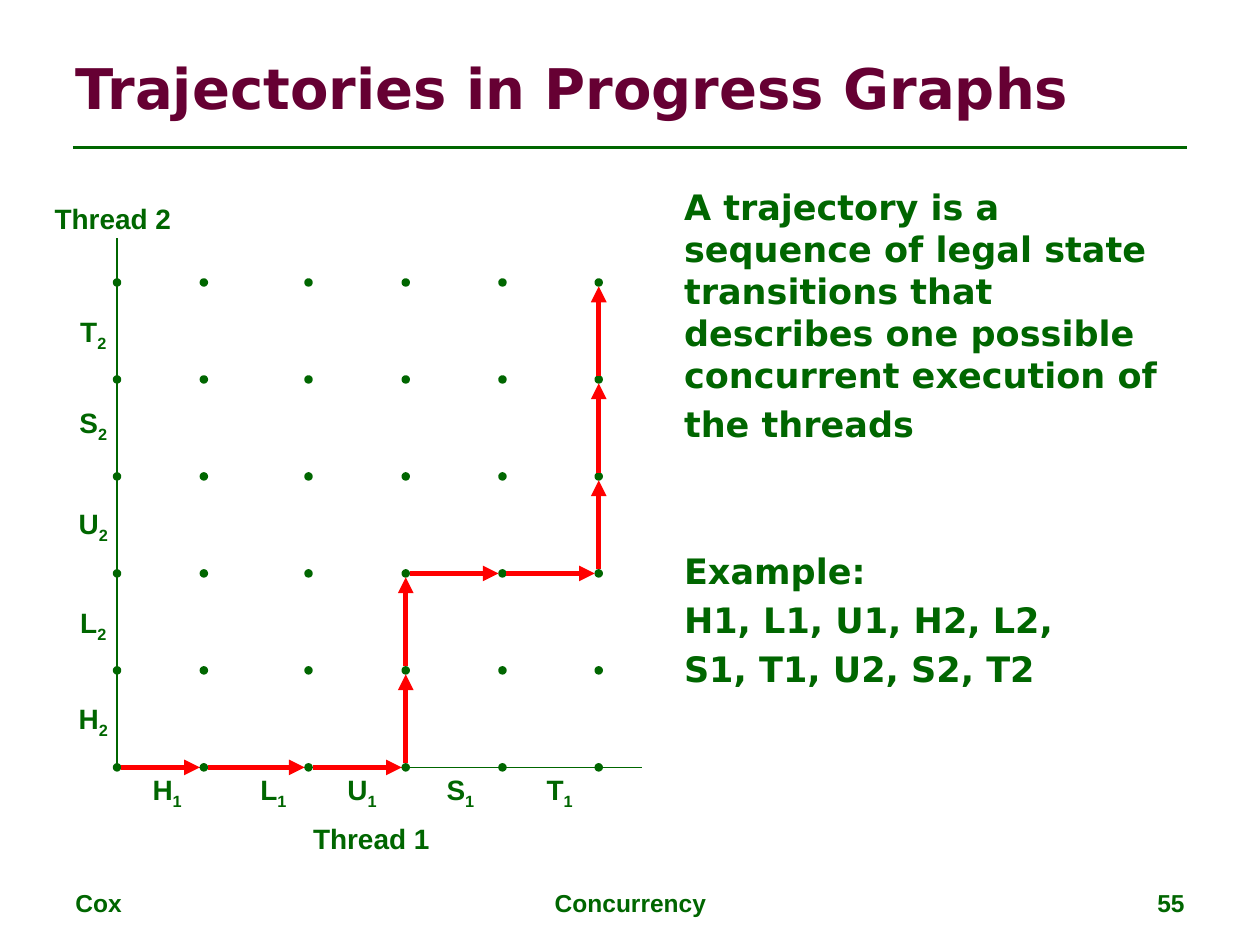
"""Build the slide on trajectories in progress graphs."""
from dataclasses import dataclass

from lxml.etree import SubElement
from pptx import Presentation
from pptx.dml.color import RGBColor
from pptx.enum.shapes import MSO_CONNECTOR, MSO_SHAPE
from pptx.enum.text import MSO_ANCHOR, MSO_AUTO_SIZE, PP_ALIGN
from pptx.oxml.ns import qn
from pptx.util import Cm, Pt


@dataclass(frozen=True)
class Theme:
    green: RGBColor = RGBColor(0x00, 0x66, 0x00)
    plum: RGBColor = RGBColor(0x66, 0x00, 0x33)
    red: RGBColor = RGBColor(0xFF, 0x00, 0x00)
    heading_font: str = "DejaVu Sans"
    label_font: str = "Arial"
    title: Pt = Pt(32)
    body: Pt = Pt(20)
    label: Pt = Pt(16)
    footer: Pt = Pt(14)


theme = Theme()


def add_text(box, lines, size, font, align=PP_ALIGN.LEFT, wrap=True, anchor=MSO_ANCHOR.TOP):
    tf = s.shapes.add_textbox(*(Cm(v) for v in box)).text_frame
    tf.word_wrap = wrap
    tf.vertical_anchor = anchor
    tf.text = "\n".join(lines)
    for p in tf.paragraphs:
        p.alignment = align
        p.font.size, p.font.name, p.font.bold = size, font, True
        p.font.color.rgb = theme.green
    return tf


def add_line(start, end, color, width, arrow=False):
    sp = s.shapes.add_connector(MSO_CONNECTOR.STRAIGHT, *(Cm(v) for v in (*start, *end)))
    sp.line.color.rgb = color
    sp.line.width = Pt(width)
    if arrow:
        SubElement(sp.line._get_or_add_ln(), qn("a:tailEnd"), type="triangle")
    SubElement(sp._element.spPr, qn("a:effectLst"))


prs = Presentation()
prs.slide_width, prs.slide_height = Cm(25.4), Cm(19.05)
s = prs.slides.add_slide(prs.slide_layouts[5])

title = s.shapes.title
title.left, title.top, title.width, title.height = Cm(1.27), Cm(0.76), Cm(22.86), Cm(1.98)
tf = title.text_frame
tf.text = "Trajectories in Progress Graphs"
tf.auto_size = MSO_AUTO_SIZE.NONE
tf.vertical_anchor = MSO_ANCHOR.MIDDLE
p = tf.paragraphs[0]
p.alignment = PP_ALIGN.LEFT
r = p.runs[0]
r.font.size, r.font.name, r.font.bold = theme.title, theme.heading_font, True
r.font.color.rgb = theme.plum
add_line((1.47, 2.97), (23.93, 2.97), theme.green, 1.5)

for left, width, text, align in [
    (1.27, 5.92, "Cox", PP_ALIGN.LEFT),
    (8.69, 8.04, "Concurrency", PP_ALIGN.CENTER),
    (18.21, 5.92, "55", PP_ALIGN.RIGHT),
]:
    add_text((left, 17.78, width, 0.89), [text], theme.footer, theme.label_font, align)

body = {
    "A trajectory is a sequence of legal state transitions that describes "
    "one possible concurrent execution of": 0,
    "the threads": 4,
    "Example:": 60,
    "H1, L1, U1, H2, L2,": 4,
    "S1, T1, U2, S2, T2": 4,
}
tf = add_text((13.54, 3.61, 10.59, 13.41), body, theme.body, theme.heading_font)
for p, space in zip(tf.paragraphs, body.values()):
    p.space_before = Pt(space)

columns = [2.36, 4.11, 6.22, 8.18, 10.13, 12.07]
rows = [15.47 - 1.955 * i for i in range(6)]
origin = (columns[0], rows[0])
add_line(origin, (12.95, rows[0]), theme.green, 1)
add_line(origin, (columns[0], 4.8), theme.green, 1)

label_w, label_h = 1.14, 0.94
centers = [(x, 15.96) for x in (3.37, 5.51, 7.3, 9.28, 11.28)]
centers += [(1.88, y) for y in (14.52, 12.59, 10.6, 8.57, 6.72)]
steps = [step + thread for thread in "12" for step in "HLUST"]
for (x, y), (step, thread) in zip(centers, steps):
    box = (x - label_w / 2, y - label_h / 2, label_w, label_h)
    tf = add_text(box, [step], theme.label, theme.label_font,
                  PP_ALIGN.CENTER, False, MSO_ANCHOR.MIDDLE)
    r = tf.paragraphs[0].add_run()
    r.text = thread
    r.font._element.set("baseline", "-25000")

for left, top, text in [(6.05, 16.43, "Thread 1"), (0.84, 3.94, "Thread 2")]:
    add_text((left, top, 2.87, 0.94), [text], theme.label, theme.label_font,
             PP_ALIGN.CENTER, False, MSO_ANCHOR.MIDDLE)

dot = 0.1
for y in rows:
    for x in columns:
        sp = s.shapes.add_shape(MSO_SHAPE.OVAL, Cm(x - dot / 2), Cm(y - dot / 2), Cm(dot), Cm(dot))
        sp.shadow.inherit = False
        sp.fill.solid()
        sp.fill.fore_color.rgb = theme.green
        sp.line.color.rgb = theme.green
        sp.line.width = Pt(2)

gap = 0.08
col = row = 0
for step, thread in "H1 L1 U1 H2 L2 S1 T1 U2 S2 T2".split():
    x, y = columns[col], rows[row]
    if thread == "1":
        col += 1
        add_line((x + gap, y), (columns[col] - gap, y), theme.red, 3, True)
    else:
        row += 1
        add_line((x, y - gap), (x, rows[row] + gap), theme.red, 3, True)

prs.save("out.pptx")
